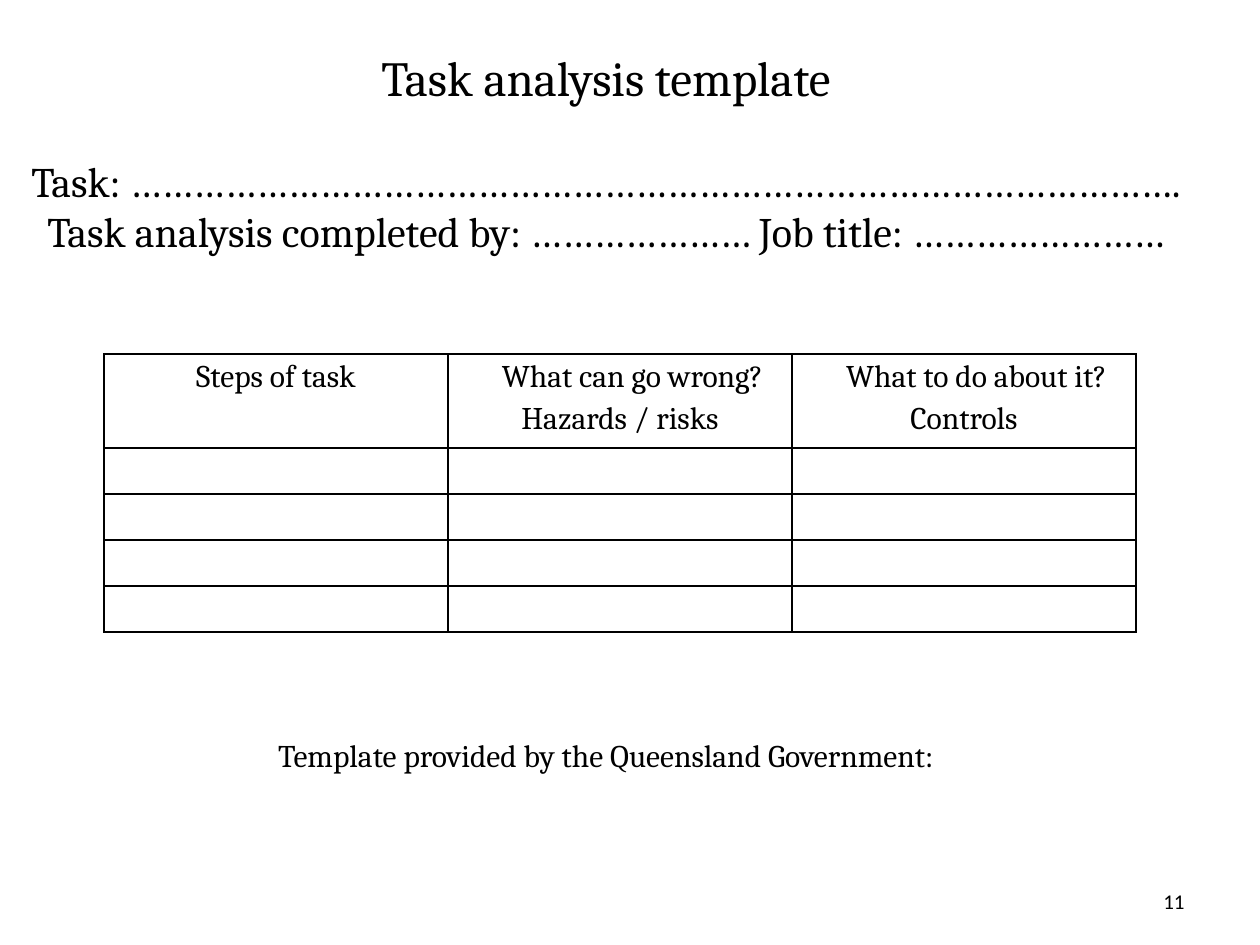
from dataclasses import dataclass

from lxml import etree
from pptx import Presentation
from pptx import util as u
from pptx.dml import color
from pptx.enum import text
from pptx.oxml import ns

EMU_PER_PX = 914400 / 126


@dataclass(frozen=True)
class Theme:
    ink: str = "000000"
    serif: str = "Cambria"
    sans: str = "Calibri"
    title: int = 28
    form: int = 24
    body: int = 18
    page: int = 12
    border: int = 1


THEME = Theme()


@dataclass(frozen=True)
class Line:
    words: str
    size: int = THEME.body
    font: str = THEME.serif
    align: text.PP_ALIGN = text.PP_ALIGN.CENTER
    space_before: int = 0
    spacing: float = 1.0
    indent: int = 0


@dataclass(frozen=True)
class TextBlock:
    left: int
    top: int
    width: int
    height: int
    lines: tuple[Line, ...]
    anchor: text.MSO_ANCHOR = text.MSO_ANCHOR.MIDDLE


def px(length: int) -> u.Emu:
    return u.Emu(round(length * EMU_PER_PX))


def write_lines(frame, lines: tuple[Line, ...]) -> None:
    frame.text = "\n".join(line.words for line in lines)
    for paragraph, line in zip(frame.paragraphs, lines):
        paragraph.alignment = line.align
        paragraph.line_spacing = line.spacing
        paragraph.space_before = u.Pt(line.space_before)
        if line.indent:
            properties = paragraph._p.get_or_add_pPr()
            properties.set("marL", str(px(line.indent)))
            properties.set("indent", "0")
        for run in paragraph.runs:
            run.font.size = u.Pt(line.size)
            run.font.name = line.font
            run.font.color.rgb = color.RGBColor.from_string(THEME.ink)


def draw_text(slide, block: TextBlock) -> None:
    shape = slide.shapes.add_textbox(
        px(block.left), px(block.top), px(block.width), px(block.height))
    frame = shape.text_frame
    frame.word_wrap = True
    frame.vertical_anchor = block.anchor
    write_lines(frame, block.lines)


def outline_cell(cell) -> None:
    """Clear the cell's fill and rule all four sides."""
    cell.fill.background()
    properties = cell._tc.get_or_add_tcPr()
    for position, side in enumerate(("lnL", "lnR", "lnT", "lnB")):
        border = etree.Element(ns.qn(f"a:{side}"), w=str(u.Pt(THEME.border)))
        fill = etree.SubElement(border, ns.qn("a:solidFill"))
        etree.SubElement(fill, ns.qn("a:srgbClr"), val=THEME.ink)
        properties.insert(position, border)


def draw_table(slide, left: int, top: int, column_width: int,
               row_heights: tuple[int, ...],
               headers: tuple[tuple[Line, ...], ...]) -> None:
    table = slide.shapes.add_table(
        len(row_heights), len(headers), px(left), px(top),
        px(column_width * len(headers)), px(sum(row_heights))).table
    table.first_row = table.horz_banding = False
    for column in table.columns:
        column.width = px(column_width)
    for row, height in zip(table.rows, row_heights):
        row.height = px(height)
    for cell in table.iter_cells():
        cell.margin_left = cell.margin_right = px(9)
        cell.margin_top = cell.margin_bottom = 0
        outline_cell(cell)
    for column, lines in enumerate(headers):
        write_lines(table.cell(0, column).text_frame, lines)


HEADERS = (
    (Line("Steps of task", spacing=1.15),),
    (Line("What can go wrong?", spacing=1.15, indent=25),
     Line("Hazards / risks", spacing=1.15)),
    (Line("What to do about it?", spacing=1.15, indent=25),
     Line("Controls", spacing=1.15)),
)

TEXT_BLOCKS = (
    TextBlock(15, 40, 1182, 224, (
        Line("Task analysis template", THEME.title),
        Line("Task: ……………………………………………………………………………………….",
             THEME.form, space_before=28),
        Line("Task analysis completed by: ………………… Job title: ……………………",
             THEME.form),
    )),
    TextBlock(15, 730, 1182, 50,
              (Line("Template provided by the Queensland Government:"),),
              text.MSO_ANCHOR.TOP),
    TextBlock(903, 876, 294, 50,
              (Line("11", THEME.page, THEME.sans, text.PP_ALIGN.RIGHT),)),
)


def main() -> None:
    presentation = Presentation()
    presentation.slide_width = px(1260)
    presentation.slide_height = px(945)
    slide = presentation.slides.add_slide(presentation.slide_layouts[6])
    draw_table(slide, 104, 354, 344, (94,) + (46,) * 4, HEADERS)
    for block in TEXT_BLOCKS:
        draw_text(slide, block)
    presentation.save("out.pptx")


if __name__ == "__main__":
    main()
